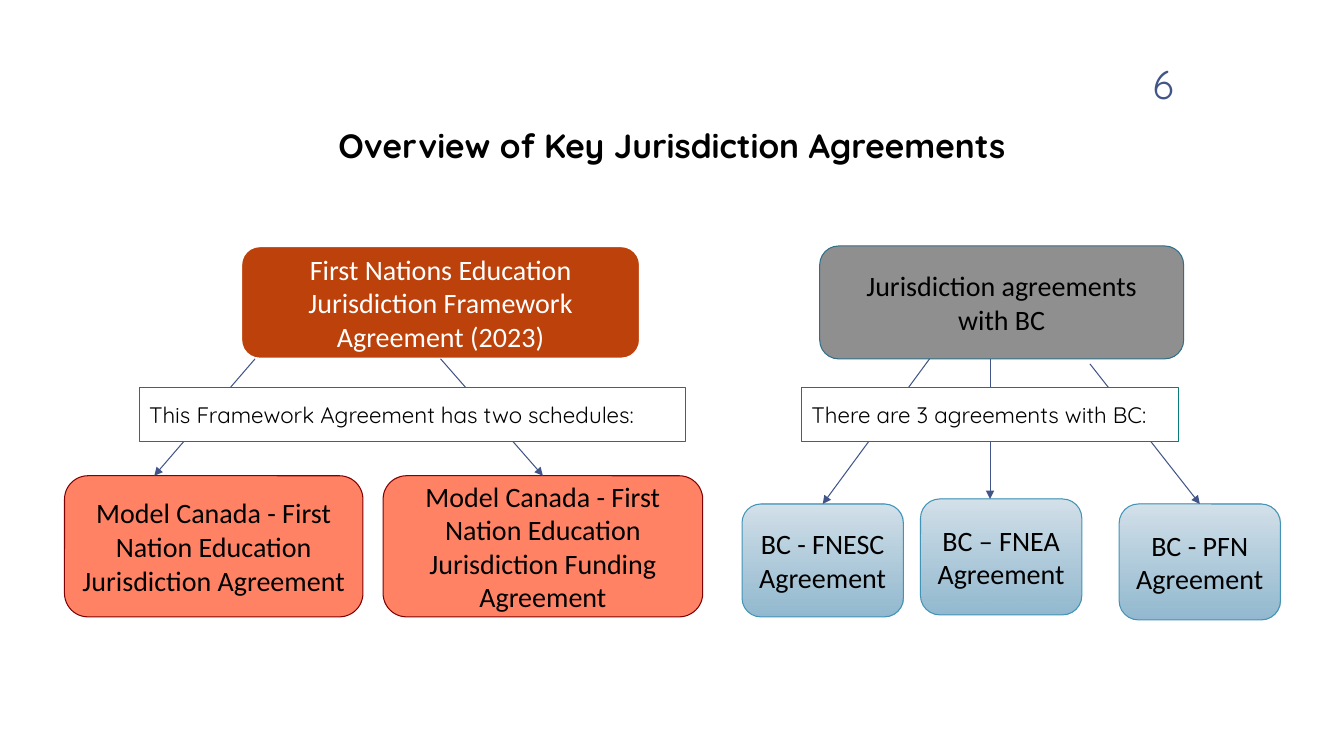
from dataclasses import dataclass

from lxml import etree
from pptx import Presentation
from pptx.dml.color import RGBColor
from pptx.enum import shapes, text
from pptx.oxml import ns
from pptx.util import Inches, Pt


class Theme:
    heading, body = "Quicksand", "Calibri"
    title_size, number_size, box_size, note_size = 24, 28, 20, 16
    black, white, arrow = "000000", "FFFFFF", "415588"
    framework = dict(fill="BC410A", line="FFFFFF", width=1.75, color="FFFFFF")
    provincial = dict(fill="8F8F8F", line="316F89")
    schedule = dict(fill="FF8265", line="800000")
    agreement = dict(fill=("D4E1EA", "8AB4CC"), line="4294B6")
    note = dict(fill="FFFFFF", line="087D7C", font=heading, size=note_size,
                align=text.PP_ALIGN.LEFT, outline=shapes.MSO_SHAPE.RECTANGLE)
    end_opacity = 92


@dataclass
class Child:
    """A lower box and the arrow that reaches it, relative to the region."""
    wording: str
    box: tuple
    arrow_from: tuple
    arrow_to_x: float


def add_sub(parent, tag, **attributes):
    return etree.SubElement(parent, ns.qn(tag), attributes)


def write(frame, wording, font, size, color, align,
          anchor=text.MSO_ANCHOR.MIDDLE, bold=False):
    layout = dict(word_wrap=True, auto_size=text.MSO_AUTO_SIZE.NONE,
                  vertical_anchor=anchor)
    for name, value in layout.items():
        setattr(frame, name, value)
    frame.text = wording
    for paragraph in frame.paragraphs:
        paragraph.alignment = align
        for name, value in dict(name=font, size=Pt(size), bold=bold).items():
            setattr(paragraph.font, name, value)
        paragraph.font.color.rgb = RGBColor.from_string(color)


def paint(fill, color):
    """Fill with one colour, or from top to bottom with a pair."""
    if isinstance(color, str):
        fill.solid()
        fill.fore_color.rgb = RGBColor.from_string(color)
        return
    fill.gradient()
    fill.gradient_angle = 270
    for stop, position, shade in zip(fill.gradient_stops, (0, 1), color):
        stop.position = position
        stop.color.rgb = RGBColor.from_string(shade)


def add_box(slide, box, wording, fill, line, width=0.75, color=Theme.black,
            font=Theme.body, size=Theme.box_size, align=text.PP_ALIGN.CENTER,
            outline=shapes.MSO_SHAPE.ROUNDED_RECTANGLE):
    panel = slide.shapes.add_shape(outline, *map(Inches, box))
    panel.shadow.inherit = False
    paint(panel.fill, fill)
    if not isinstance(fill, str):
        end_color = panel._element.spPr.findall(".//" + ns.qn("a:srgbClr"))[-1]
        add_sub(end_color, "a:alpha", val=str(Theme.end_opacity * 1000))
    panel.line.color.rgb = RGBColor.from_string(line)
    panel.line.width = Pt(width)
    write(panel.text_frame, wording, font, size, color, align)
    return panel


def add_arrow(slide, start, end):
    arrow = slide.shapes.add_connector(
        shapes.MSO_CONNECTOR.STRAIGHT, *map(Inches, (*start, *end)))
    arrow.line.color.rgb = RGBColor.from_string(Theme.arrow)
    arrow.line.width = Pt(0.75)
    add_sub(arrow.line._get_or_add_ln(), "a:tailEnd", type="triangle")
    add_sub(arrow._element.spPr, "a:effectLst")
    return arrow


def is_middle(point, box, side_y):
    x, y = point
    return abs(x - box[0] - box[2] / 2) < 0.02 and abs(y - side_y) < 0.02


def add_agreement_tree(slide, left, top, head, head_style, note, children, child_style):
    """Place a head box, its children, the arrows between and a note across them."""
    def placed(box):
        x, y, *size = box
        return (left + x, top + y, *size)

    head_wording, head_box = head
    head_box = placed(head_box)
    head_panel = add_box(slide, head_box, head_wording, **head_style)
    for child in children:
        child_box = placed(child.box)
        child_panel = add_box(slide, child_box, child.wording, **child_style)
        start = placed(child.arrow_from)
        end = (left + child.arrow_to_x, child_box[1])
        arrow = add_arrow(slide, start, end)
        if is_middle(start, head_box, head_box[1] + head_box[3]):
            arrow.begin_connect(head_panel, 2)
        if is_middle(end, child_box, child_box[1]):
            arrow.end_connect(child_panel, 0)
    note_wording, note_box = note
    add_box(slide, placed(note_box), note_wording, **Theme.note)


def add_heading(slide, left, top, width):
    title = slide.shapes.title
    place = dict(left=left, top=top + 0.64, width=width, height=0.5)
    for name, value in place.items():
        setattr(title, name, Inches(value))
    write(title.text_frame, "Overview of Key Jurisdiction Agreements", Theme.heading,
          Theme.title_size, Theme.black, text.PP_ALIGN.CENTER, bold=True)
    page_number = slide.shapes.add_textbox(
        *map(Inches, (left + 9.27, top, 0.89, 0.55)))
    write(page_number.text_frame, "6", Theme.heading, Theme.number_size,
          Theme.arrow, text.PP_ALIGN.RIGHT, anchor=text.MSO_ANCHOR.TOP)


def main():
    deck = Presentation()
    deck.slide_width, deck.slide_height = Inches(13.33), Inches(7.5)
    slide = deck.slides.add_slide(deck.slide_layouts.get_by_name("Title Only"))
    add_heading(slide, 1.58, 0.55, 10.17)
    add_agreement_tree(
        slide, 0.64, 2.44,
        ("First Nations Education Jurisdiction Framework Agreement (2023)",
         (1.75, 0, 3.96, 1.12)), Theme.framework,
        ("This Framework Agreement has two schedules:", (0.74, 1.4, 5.42, 0.54)),
        [Child("Model Canada - First Nation Education Jurisdiction Agreement",
               (0, 2.28, 2.96, 1.4), (1.89, 1.12), 0.89),
         Child("Model Canada - First Nation Education Jurisdiction Funding Agreement",
               (3.16, 2.28, 3.17, 1.4), (3.73, 1.12), 4.74)],
        Theme.schedule)
    add_agreement_tree(
        slide, 7.36, 2.44,
        ("Jurisdiction agreements\nwith BC", (0.77, 0, 3.61, 1.12)), Theme.provincial,
        ("There are 3 agreements with BC:", (0.59, 1.4, 3.74, 0.54)),
        [Child("BC - FNESC Agreement", (0, 2.56, 1.6, 1.12), (1.86, 1.12), 0.8),
         Child("BC – FNEA Agreement", (1.77, 2.51, 1.6, 1.15), (2.46, 1.12), 2.46),
         Child("BC - PFN Agreement", (3.74, 2.56, 1.6, 1.15), (3.45, 1.17), 4.54)],
        Theme.agreement)
    deck.save("out.pptx")


if __name__ == "__main__":
    main()
